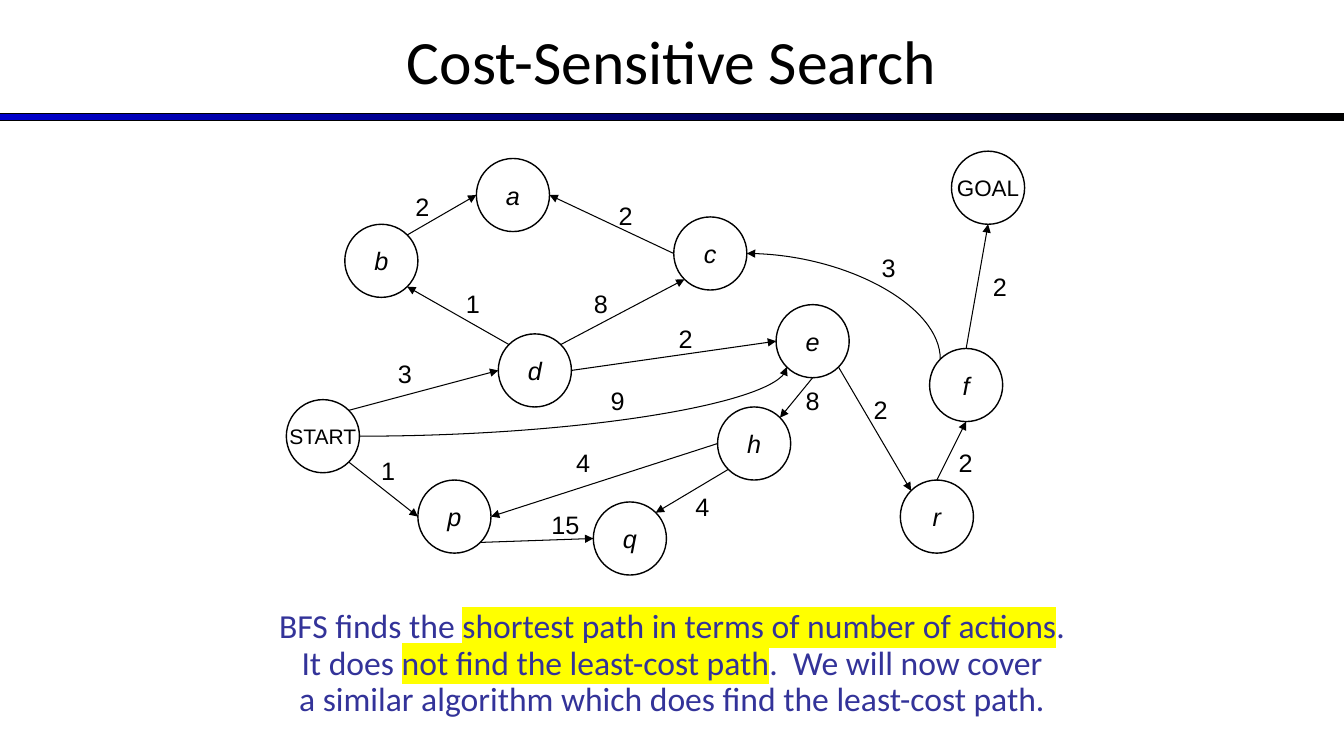
"""Build the Cost-Sensitive Search slide: a weighted search graph with a remark below."""
from dataclasses import dataclass
from math import sqrt

from lxml.etree import SubElement
from pptx import Presentation
from pptx.dml.color import RGBColor
from pptx.enum.shapes import MSO_CONNECTOR as Link, MSO_SHAPE as Preset
from pptx.enum.text import MSO_ANCHOR as Anchor, PP_ALIGN as Align
from pptx.oxml.ns import qn
from pptx.oxml.xmlchemy import OxmlElement
from pptx.util import Inches, Pt

WIDTH, HEIGHT = Inches(13.33), Inches(7.5)
UNIT = Inches(0.0725)
GRID_LEFT, GRID_TOP = Inches(2.84), Inches(1.5)
NODE_UNITS = 10
BLACK, BLUE, INDIGO, YELLOW = "000000", "0000CC", "333399", "FFFF00"

NEAR, MID, FAR = (1 - sqrt(0.5)) / 2, 0.5, (1 + sqrt(0.5)) / 2
SITES = {
    "N": (MID, 0), "NE": (FAR, NEAR), "E": (1, MID), "SE": (FAR, FAR),
    "S": (MID, 1), "SW": (NEAR, FAR), "W": (0, MID), "NW": (NEAR, NEAR),
}

TITLE_FONT = {"name": "Calibri", "size": Pt(44)}
REMARK_FONT = {"name": "Calibri", "size": Pt(24)}
COST_FONT = {"name": "Arial", "size": Pt(18)}
FRAME = {"word_wrap": True, "vertical_anchor": Anchor.TOP}


@dataclass(frozen=True)
class Node:
    """A state of the graph, placed by grid column and row."""
    column: int
    row: int
    size: int = 18
    italic: bool = True


@dataclass(frozen=True)
class Edge:
    """An arrow between two sites, with its cost placed by column and row."""
    source: str
    leave: str
    target: str
    enter: str
    cost: str
    column: float
    row: float
    curved: bool = False
    backward: bool = False


NODES = {
    "START": Node(0, 34, 15, False),
    "GOAL": Node(91, 0, 16, False),
    "d": Node(29, 25),
    "b": Node(8, 10),
    "p": Node(18, 45),
    "q": Node(42, 48),
    "c": Node(53, 9),
    "e": Node(67, 21),
    "h": Node(59, 35),
    "a": Node(26, 1),
    "f": Node(88, 27),
    "r": Node(84, 45),
}

EDGES = [
    Edge("START", "SE", "p", "W", "1", 11.6, 41),
    Edge("p", "SE", "q", "W", "15", 34.9, 48.3),
    Edge("h", "SW", "q", "NE", "4", 54.6, 45.8),
    Edge("h", "W", "p", "E", "4", 38.3, 39.9),
    Edge("e", "S", "h", "NE", "8", 69.7, 31.3),
    Edge("e", "SE", "r", "NW", "2", 79, 32.6),
    Edge("r", "N", "f", "S", "2", 90.6, 39.9),
    Edge("f", "N", "GOAL", "S", "2", 95.3, 15.7),
    Edge("START", "NE", "d", "W", "3", 13.9, 27.7),
    Edge("d", "NW", "b", "SE", "1", 23.2, 18.1),
    Edge("b", "NE", "a", "W", "2", 16.3, 4.8),
    Edge("c", "W", "a", "E", "2", 44.1, 6.1),
    Edge("d", "NE", "c", "SW", "8", 40.7, 18.1),
    Edge("d", "E", "e", "W", "2", 52.3, 22.9),
    Edge("c", "E", "f", "NW", "3", 80.1, 13.2, curved=True, backward=True),
    Edge("START", "E", "e", "SW", "9", 43, 31.3, curved=True),
]

REMARK = [
    [("BFS finds the ", False), ("shortest path in terms of number of actions", True), (".", False)],
    [("It does ", False), ("not find the least-cost path", True), (".  We will now cover", False)],
    [("a similar algorithm which does find the least-cost path.", False)],
]


def color(value: str) -> RGBColor:
    """Turn a hex string into a colour."""
    return RGBColor.from_string(value)


def share(left: float, top: float, width: float, height: float) -> tuple[int, ...]:
    """Turn shares of the slide's size into a box."""
    return tuple(round(part * whole) for part, whole in
                 zip((left, top, width, height), (WIDTH, HEIGHT, WIDTH, HEIGHT)))


def grid(column: float, row: float) -> tuple[int, int]:
    """Turn a grid column and row into a point."""
    return round(GRID_LEFT + column * UNIT), round(GRID_TOP + row * UNIT)


def apply(part, values: dict) -> None:
    """Set every attribute of a format on a part."""
    for name, value in values.items():
        setattr(part, name, value)


def write(paragraph, text: str, font: dict, ink: str):
    """Add a formatted run to a paragraph."""
    run = paragraph.add_run()
    run.text = text
    apply(run.font, font)
    run.font.color.rgb = color(ink)
    return run


def highlight(run) -> None:
    """Mark a run in yellow."""
    marker = OxmlElement("a:highlight")
    SubElement(marker, qn("a:srgbClr"), val=YELLOW)
    run.font._element.find(qn("a:solidFill")).addnext(marker)


def draw_heading(slide) -> None:
    """Place the title and the gradient bar under it."""
    title = slide.shapes.title
    apply(title, dict(zip(("left", "top", "width", "height"), share(0, -0.004, 1, 0.167))))
    apply(title.text_frame, FRAME | {"vertical_anchor": Anchor.MIDDLE})
    heading = title.text_frame.paragraphs[0]
    heading.alignment = Align.CENTER
    write(heading, "Cost-Sensitive Search", TITLE_FONT, BLACK)
    bar = slide.shapes.add_shape(Preset.RECTANGLE, *share(0, 0.15, 1, 0.01))
    bar.shadow.inherit = False
    bar.fill.gradient()
    bar.fill.gradient_angle = 0
    for stop, shade in zip(bar.fill.gradient_stops, (BLUE, BLACK)):
        stop.color.rgb = color(shade)
    bar.line.color.rgb = color(BLACK)
    bar.line.width = Pt(0.75)


def draw_node(slide, name: str, node: Node) -> None:
    """Draw one state as a named circle."""
    diameter = NODE_UNITS * UNIT
    circle = slide.shapes.add_shape(Preset.FLOWCHART_CONNECTOR, *grid(node.column, node.row),
                                    diameter, diameter)
    circle.shadow.inherit = False
    circle.fill.background()
    circle.line.color.rgb = color(BLACK)
    circle.line.width = Pt(1)
    apply(circle.text_frame, {"word_wrap": False, "vertical_anchor": Anchor.MIDDLE})
    label = circle.text_frame.paragraphs[0]
    label.alignment = Align.CENTER
    write(label, name, {"name": "Arial", "size": Pt(node.size), "italic": node.italic}, BLACK)


def site(name: str, side: str) -> tuple[int, int]:
    """Find the point on a node's rim that faces a side."""
    across, down = SITES[side]
    return grid(NODES[name].column + across * NODE_UNITS, NODES[name].row + down * NODE_UNITS)


def draw_edge(slide, edge: Edge) -> None:
    """Draw one arrow and write its cost."""
    arrow = slide.shapes.add_connector(Link.CURVE if edge.curved else Link.STRAIGHT,
                                       *site(edge.source, edge.leave), *site(edge.target, edge.enter))
    arrow.line.color.rgb = color(BLACK)
    arrow.line.width = Pt(0.75)
    properties = arrow._element.spPr
    if edge.curved:
        properties.find(qn("a:prstGeom")).set("prst", "curvedConnector2")
    tip = "a:headEnd" if edge.backward else "a:tailEnd"
    SubElement(properties.find(qn("a:ln")), qn(tip), type="triangle")
    SubElement(properties, qn("a:effectLst"))
    width = Inches(0.34 + 0.17 * (len(edge.cost) - 1))
    cost = slide.shapes.add_textbox(*grid(edge.column, edge.row), width, Inches(0.4))
    apply(cost.text_frame, FRAME)
    write(cost.text_frame.paragraphs[0], edge.cost, COST_FONT, BLACK)


def draw_remark(slide) -> None:
    """Write the remark on breadth-first search."""
    frame = slide.shapes.add_textbox(*share(0, 0.8, 1, 0.18)).text_frame
    apply(frame, FRAME)
    for index, pieces in enumerate(REMARK):
        line = frame.add_paragraph() if index else frame.paragraphs[0]
        apply(line, {"alignment": Align.CENTER, "line_spacing": 0.9})
        for text, marked in pieces:
            run = write(line, text, REMARK_FONT, INDIGO)
            if marked:
                highlight(run)


def main() -> None:
    """Build and save the slide."""
    deck = Presentation()
    apply(deck, {"slide_width": WIDTH, "slide_height": HEIGHT})
    slide = deck.slides.add_slide(deck.slide_layouts.get_by_name("Title Only"))
    draw_heading(slide)
    for name, node in NODES.items():
        draw_node(slide, name, node)
    for edge in EDGES:
        draw_edge(slide, edge)
    draw_remark(slide)
    deck.save("out.pptx")


if __name__ == "__main__":
    main()
